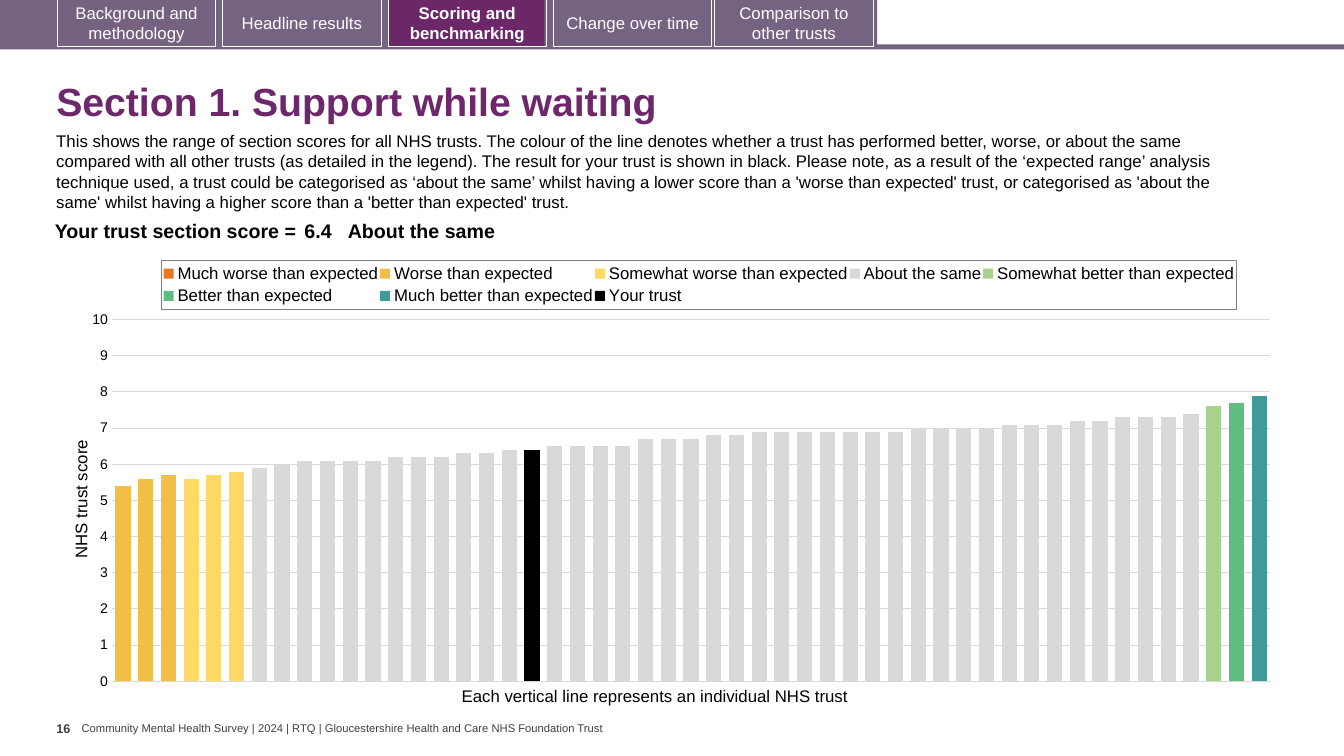
import copy

import pptx
import pptx.chart.data
import pptx.dml.color
import pptx.enum.chart
import pptx.enum.shapes
import pptx.enum.text
import pptx.oxml
import pptx.oxml.ns
import pptx.util

Inches, Pt, qn = pptx.util.Inches, pptx.util.Pt, pptx.oxml.ns.qn
ALIGN, ANCHOR = pptx.enum.text.PP_ALIGN, pptx.enum.text.MSO_ANCHOR

HEADER_BARS = [  # left, top, width, height, fill
    (0, 0.44, 13.33, 0.05, "756382"),
    (0, 0, 8.7, 0.47, "756382"),
    (0.59, 0, 1.54, 0.46, "746280"),
    (3.86, 0, 1.54, 0.46, "6B2768"),
]
TABS = [  # left, label, fill, bold
    (0.57, "Background and methodology", "746280", False),
    (2.21, "Headline results", None, False),
    (3.85, "Scoring and benchmarking", None, True),
    (5.49, "Change over time", "756382", False),
    (7.09, "Comparison to other trusts", "756382", False),
]
INTRO = (
    "This shows the range of section scores for all NHS trusts. The colour of the line "
    "denotes whether a trust has performed better, worse, or about the same compared with "
    "all other trusts (as detailed in the legend). The result for your trust is shown in "
    "black. Please note, as a result of the ‘expected range’ analysis technique used, a "
    "trust could be categorised as ‘about the same’ whilst having a lower score than a "
    "'worse than expected' trust, or categorised as 'about the same' whilst having a higher "
    "score than a 'better than expected' trust."
)
MIDDLE = {"vertical_anchor": ANCHOR.MIDDLE}
FLUSH = {"margin_left": 0, "margin_right": 0}
TEXTS = [  # box, text, font, frame, line spacing
    ((0.81, 7.16, 5.24, 0.13),
     "Community Mental Health Survey | 2024 | RTQ | Gloucestershire Health and Care NHS Foundation Trust",
     {"size": 8, "color": "404040"},
     {**MIDDLE, **FLUSH, "margin_top": 0, "margin_bottom": 0, "word_wrap": False}, None),
    ((0.46, 0.67, 12.49, 0.72), "Section 1. Support while waiting",
     {"size": 28, "color": "6D276A", "bold": True}, MIDDLE, 0.9),
    ((0.46, 1.25, 12.13, 0.91), INTRO, {"size": 12}, {}, None),
    ((0.56, 7.1, 0.25, 0.4), "16", {"size": 9, "color": "404040", "bold": True},
     {**FLUSH, "word_wrap": False}, None),
    ((4.48, 6.75, 4.11, 0.3), "Each vertical line represents an individual NHS trust",
     {"size": 12}, {"word_wrap": False}, None),
]
SCORE_ROW = [  # width, text, alignment, side margin
    (2.63, "Your trust section score =", ALIGN.RIGHT, 0.04),
    (0.47, "6.4", ALIGN.LEFT, 0.04),
    (8.59, "About the same", ALIGN.LEFT, 0),
]
TRUST_COUNT = 51
SCORES = [  # band, colour, first trust, scores
    ("Much worse than expected", "E87722", 1, []),
    ("Worse than expected", "F1BE48", 1, [5.4, 5.6, 5.7]),
    ("Somewhat worse than expected", "FFD966", 4, [5.6, 5.7, 5.8]),
    ("About the same", "D9D9D9", 7,
     [5.9, 6, 6.1, 6.1, 6.1, 6.1, 6.2, 6.2, 6.2, 6.3, 6.3, 6.4, 6.4, 6.5,
      6.5, 6.5, 6.5, 6.7, 6.7, 6.7, 6.8, 6.8, 6.9, 6.9, 6.9, 6.9, 6.9, 6.9,
      6.9, 7, 7, 7, 7, 7.1, 7.1, 7.1, 7.2, 7.2, 7.3, 7.3, 7.3, 7.4]),
    ("Somewhat better than expected", "A9D18E", 49, [7.6]),
    ("Better than expected", "5FBD83", 50, [7.7]),
    ("Much better than expected", "419999", 51, [7.9]),
    ("Your trust", "000000", 19, [6.4]),
]


def rgb(value):
    return pptx.dml.color.RGBColor.from_string(value)


def inches(box):
    return [Inches(length) for length in box]


def style_font(font, size, color="000000", bold=False):
    for key, value in {"name": "Arial", "size": Pt(size), "bold": bold}.items():
        setattr(font, key, value)
    font.color.rgb = rgb(color)


def write(frame, text, font, align=ALIGN.LEFT, frame_format=None, spacing=None):
    """Fill a text frame with one styled paragraph."""
    for key, value in {"word_wrap": True, **(frame_format or {})}.items():
        setattr(frame, key, value)
    paragraph = frame.paragraphs[0]
    paragraph.alignment = align
    paragraph.line_spacing = spacing
    run = paragraph.add_run()
    run.text = text
    style_font(run.font, **font)


def add_rect(slide, box, fill=None, line=None):
    rect = slide.shapes.add_shape(pptx.enum.shapes.MSO_SHAPE.RECTANGLE, *inches(box))
    rect.shadow.inherit = False
    if fill:
        rect.fill.solid()
        rect.fill.fore_color.rgb = rgb(fill)
    else:
        rect.fill.background()
    if line:
        rect.line.color.rgb = rgb(line)
        rect.line.width = Pt(0.75)
    else:
        rect.line.fill.background()
    return rect


def place(element, inner=False, **fractions):
    """Give a chart part a fixed position, in fractions of the chart."""
    for old in element.findall(qn("c:layout")):
        element.remove(old)
    target = '<c:layoutTarget val="inner"/>' if inner else ""
    modes = "".join(f'<c:{key}Mode val="edge"/>' for key in "xy")
    sizes = "".join(f'<c:{key} val="{value}"/>' for key, value in fractions.items())
    layout = pptx.oxml.parse_xml(
        f'<c:layout {pptx.oxml.ns.nsdecls("c")}><c:manualLayout>'
        f"{target}{modes}{sizes}</c:manualLayout></c:layout>")
    overlay = element.find(qn("c:overlay"))
    if overlay is None:
        element.insert(0, layout)
    else:
        overlay.addprevious(layout)


def move_last_series_to_right_axis(bars):
    """Split the last series into a second bar group with its own hidden axes."""
    right_bars = copy.deepcopy(bars)
    bars.remove(bars.findall(qn("c:ser"))[-1])
    for series in right_bars.findall(qn("c:ser"))[:-1]:
        right_bars.remove(series)
    bars.addnext(right_bars)
    plot_area = bars.getparent()
    category = copy.deepcopy(plot_area.find(qn("c:catAx")))
    value = copy.deepcopy(plot_area.find(qn("c:valAx")))
    plot_area.find(qn("c:valAx")).addnext(value)
    value.addnext(category)
    for tag in ("c:majorGridlines", "c:title"):
        value.remove(value.find(qn(tag)))
    for tag, setting in {"c:axPos": "r", "c:majorTickMark": "out",
                         "c:tickLblPos": "none", "c:crosses": "max"}.items():
        value.find(qn(tag)).set("val", setting)
    new_ids = {}
    for part in (right_bars, category, value):
        for tag in ("c:axId", "c:crossAx"):
            for axis_id in part.findall(qn(tag)):
                old = axis_id.get("val")
                axis_id.set("val", new_ids.setdefault(old, str(5001 + len(new_ids))))


def add_score_chart(slide):
    data = pptx.chart.data.CategoryChartData(number_format="0.0")
    data.categories = [str(trust) for trust in range(1, TRUST_COUNT + 1)]
    for band, _, first, scores in SCORES:
        after = TRUST_COUNT - (first - 1) - len(scores)
        data.add_series(band, [None] * (first - 1) + scores + [None] * after)
    chart = slide.shapes.add_chart(
        pptx.enum.chart.XL_CHART_TYPE.COLUMN_CLUSTERED,
        *inches((0.67, 2.47, 12.15, 4.44)), data).chart
    style_font(chart.font, 10)
    chart.has_title = False

    bars = chart.plots[0]
    for key, value in {"gap_width": 50, "overlap": 100, "vary_by_categories": False}.items():
        setattr(bars, key, value)
    for series, (_, color, _, _) in zip(bars.series, SCORES):
        series.format.fill.solid()
        series.format.fill.fore_color.rgb = rgb(color)
        series.invert_if_negative = False
    place(bars._element.getparent(), inner=True, x=0.036, y=0.158, w=0.946, h=0.808)

    chart.category_axis.visible = False
    axis = chart.value_axis
    tick = pptx.enum.chart.XL_TICK_MARK.NONE
    for key, value in {"minimum_scale": 0, "maximum_scale": 10, "major_unit": 1,
                       "major_tick_mark": tick, "minor_tick_mark": tick}.items():
        setattr(axis, key, value)
    axis.tick_labels.number_format = "0"
    axis.tick_labels.number_format_is_linked = False
    style_font(axis.tick_labels.font, 10)
    axis.format.line.fill.background()
    axis.major_gridlines.format.line.color.rgb = rgb("D9D9D9")
    axis.major_gridlines.format.line.width = Pt(0.75)
    heading = axis.axis_title.text_frame.paragraphs[0].add_run()
    heading.text = "NHS trust score"
    style_font(heading.font, 12)
    place(axis.axis_title._element, x=0, y=0.42)
    move_last_series_to_right_axis(bars._element)

    chart.has_legend = True
    legend = chart.legend
    legend.position = pptx.enum.chart.XL_LEGEND_POSITION.TOP
    legend.include_in_layout = False
    style_font(legend.font, 12)
    place(legend._element, x=0.077, y=0.025, w=0.877, h=0.11)
    border = pptx.oxml.parse_xml(
        f'<c:spPr {pptx.oxml.ns.nsdecls("c", "a")}><a:ln w="9525"><a:solidFill>'
        '<a:srgbClr val="7F7F7F"/></a:solidFill></a:ln></c:spPr>')
    legend._element.find(qn("c:overlay")).addnext(border)


def add_score_row(slide):
    table = slide.shapes.add_table(
        1, len(SCORE_ROW), *inches((0.35, 2.15, 11.7, 0.31))).table
    table.first_row = table.horz_banding = False
    for column, (width, text, align, side) in enumerate(SCORE_ROW):
        table.columns[column].width = Inches(width)
        cell = table.cell(0, column)
        cell.fill.background()
        cell.margin_left = cell.margin_right = Inches(side)
        cell.margin_top = cell.margin_bottom = Inches(0.04)
        write(cell.text_frame, text, {"size": 14, "bold": True}, align)


def main():
    deck = pptx.Presentation()
    deck.slide_width, deck.slide_height = Inches(13.33), Inches(7.5)
    slide = deck.slides.add_slide(deck.slide_layouts[6])
    for *box, fill in HEADER_BARS:
        add_rect(slide, box, fill)
    for left, label, fill, bold in TABS:
        tab = add_rect(slide, (left, -0.01, 1.57, 0.47), fill, "FFFFFF")
        write(tab.text_frame, label, {"size": 12, "color": "FFFFFF", "bold": bold},
              ALIGN.CENTER, MIDDLE)
    for box, text, font, frame_format, spacing in TEXTS:
        frame = slide.shapes.add_textbox(*inches(box)).text_frame
        write(frame, text, font, frame_format=frame_format, spacing=spacing)
    add_score_chart(slide)
    add_score_row(slide)
    deck.save("out.pptx")


if __name__ == "__main__":
    main()
